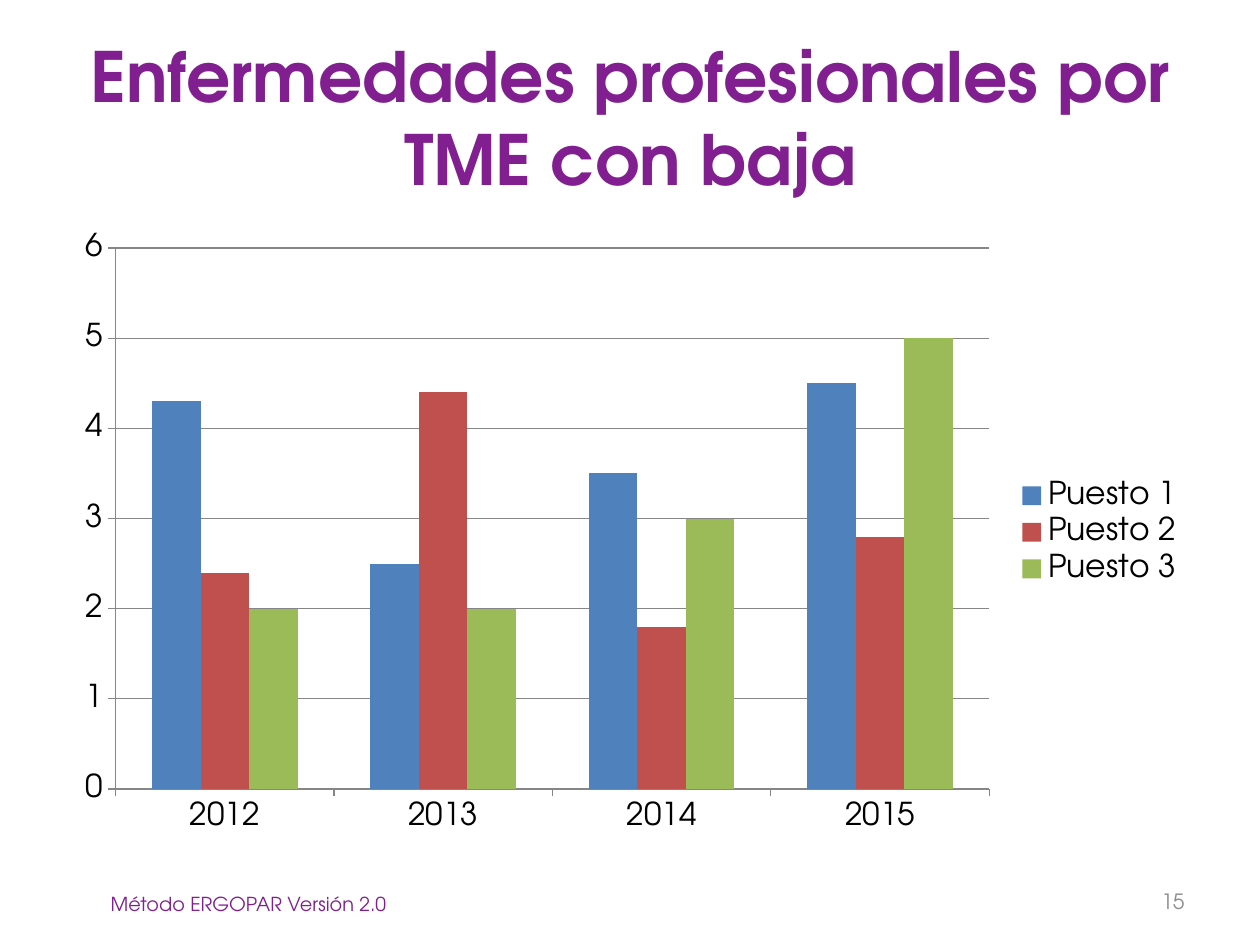
from pptx import Presentation
from pptx.chart.data import CategoryChartData
from pptx.dml.color import RGBColor
from pptx.enum.chart import XL_CHART_TYPE, XL_LEGEND_POSITION, XL_TICK_MARK
from pptx.enum.text import MSO_ANCHOR, PP_ALIGN
from pptx.util import Pt

COLUMN = XL_CHART_TYPE.COLUMN_CLUSTERED
OUT = XL_TICK_MARK.OUTSIDE
SIDE = XL_LEGEND_POSITION.RIGHT
TOP, MID = MSO_ANCHOR.TOP, MSO_ANCHOR.MIDDLE
LEFT, MIDDLE, RIGHT = PP_ALIGN.LEFT, PP_ALIGN.CENTER, PP_ALIGN.RIGHT
FACE = "TeX Gyre Adventor"
PURPLE, GREY, BLACK, LINE = "811F91", "8C8C8C", "000000", "868686"

TEXTS = [
    ("Enfermedades profesionales por TME con baja", (36, 21.6, 648, 90),
     MID, MIDDLE, {"size": Pt(39.6), "bold": True}, PURPLE),
    ("Método ERGOPAR Versión 2.0", (56.16, 506.16, 393.84, 20.88),
     TOP, LEFT, {"size": Pt(11)}, PURPLE),
    ("15", (516.24, 500.4, 167.76, 28.8),
     MID, RIGHT, {"size": Pt(12)}, GREY),
]
YEARS = ["2012", "2013", "2014", "2015"]
SERIES = [
    ("Puesto 1", (4.3, 2.5, 3.5, 4.5), "4F81BD"),
    ("Puesto 2", (2.4, 4.4, 1.8, 2.8), "C0504D"),
    ("Puesto 3", (2, 2, 3, 5), "9BBB59"),
]
CHART_BOX = (36, 126, 648, 356.4)


def paint(target, color):
    target.rgb = RGBColor.from_string(color)


def style(font, color, values):
    for name, value in {"name": FACE, **values}.items():
        setattr(font, name, value)
    paint(font.color, color)


def rule(line):
    line.width = Pt(0.75)
    paint(line.color, LINE)


def add_text(slide, text, box, anchor, align, values, color):
    frame = slide.shapes.add_textbox(*map(Pt, box)).text_frame
    frame.word_wrap = True
    frame.vertical_anchor = anchor
    para = frame.paragraphs[0]
    para.alignment = align
    run = para.add_run()
    run.text = text
    style(run.font, color, values)


def add_bars(slide):
    data = CategoryChartData()
    data.categories = YEARS
    for name, values, _ in SERIES:
        data.add_series(name, values)
    chart = slide.shapes.add_chart(COLUMN, *map(Pt, CHART_BOX), data).chart
    style(chart.font, BLACK, {"size": Pt(18)})
    chart.has_title = False
    chart.has_legend = True
    chart.legend.position = SIDE
    chart.legend.include_in_layout = False

    plot = chart.plots[0]
    plot.vary_by_categories = False
    plot.gap_width = 150
    plot.overlap = 0
    for bars, (_, _, color) in zip(plot.series, SERIES):
        bars.format.fill.solid()
        paint(bars.format.fill.fore_color, color)

    for axis in (chart.category_axis, chart.value_axis):
        axis.major_tick_mark = OUT
        rule(axis.format.line)
    scale = chart.value_axis
    scale.minimum_scale, scale.maximum_scale, scale.major_unit = 0, 6, 1
    scale.has_major_gridlines = True
    rule(scale.major_gridlines.format.line)


def main():
    deck = Presentation()
    deck.slide_width, deck.slide_height = Pt(720), Pt(540)
    slide = deck.slides.add_slide(deck.slide_layouts[6])
    add_bars(slide)
    for item in TEXTS:
        add_text(slide, *item)
    deck.save("out.pptx")


if __name__ == "__main__":
    main()
